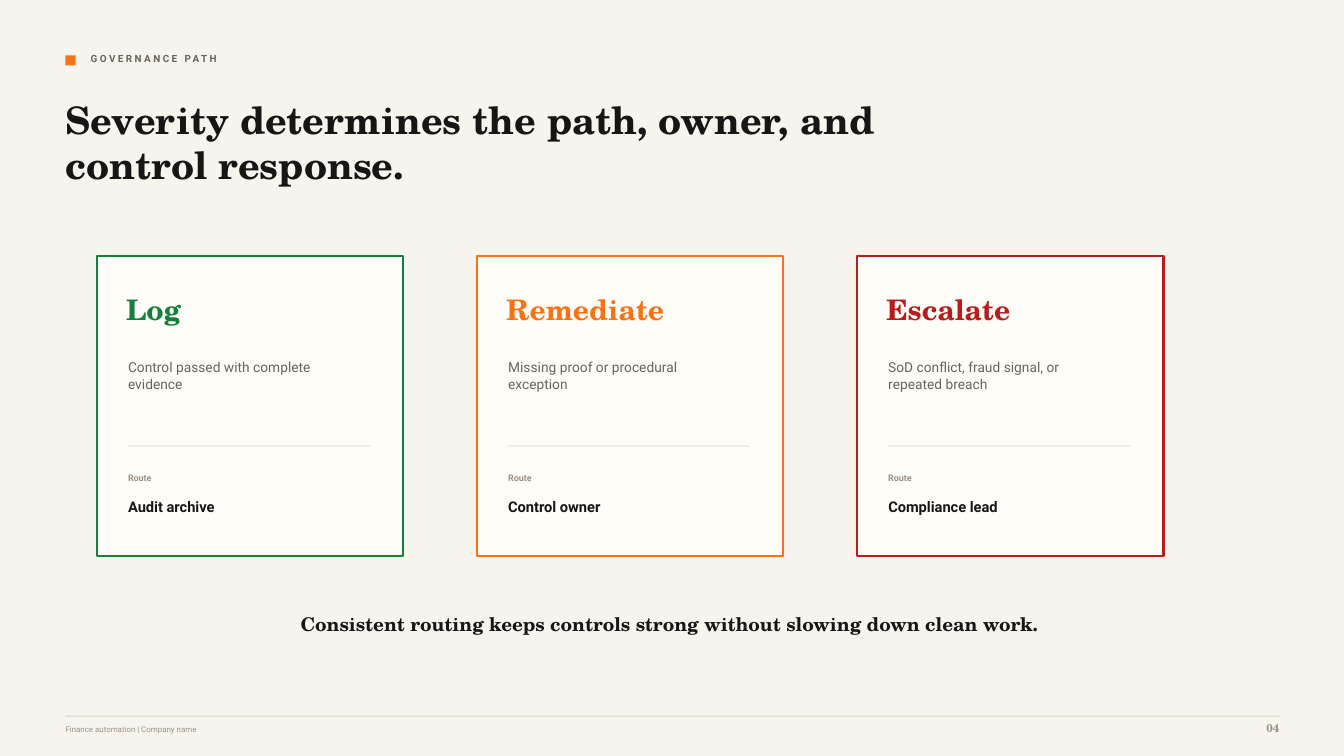
"""Build the governance path slide with its three severity cards."""
from pptx import Presentation
from pptx.dml.color import RGBColor
from pptx.enum.shapes import MSO_SHAPE as Shape
from pptx.enum.text import PP_ALIGN as Align
from pptx.util import Emu, Pt

EMU_PER_PX = 9144
SERIF, SANS = "TeX Gyre Schola", "Roboto"
COLORS = {
    "paper": "F7F4EE", "card": "FFFDF8", "rule": "D9D0C3",
    "ink": "171614", "body": "69635A", "muted": "9A9184",
    "green": "15803D", "orange": "F97316", "red": "B91C1C",
}
CARDS = [
    ("Log", "green", ["Control passed with complete", "evidence"], "Audit archive"),
    ("Remediate", "orange", ["Missing proof or procedural", "exception"], "Control owner"),
    ("Escalate", "red", ["SoD conflict, fraud signal, or", "repeated breach"], "Compliance lead"),
]
CARD_LEFT, CARD_TOP, CARD_PITCH = 96, 254, 377


def px(*lengths):
    """Turn whole pixels into EMU lengths."""
    return [Emu(length * EMU_PER_PX) for length in lengths]


def color(name):
    """Look up a named colour."""
    return RGBColor.from_string(COLORS[name])


class SlideBuilder:
    """Hold the current slide and draw its elements in one style."""

    def __init__(self, page):
        """Keep the page and give it the paper colour."""
        self.page = page
        page.background.fill.solid()
        page.background.fill.fore_color.rgb = color("paper")

    def rect(self, left, top, width, height, fill, line=None):
        """Draw a flat rectangle, outlined if a line colour is given."""
        shape = self.page.shapes.add_shape(Shape.RECTANGLE, *px(left, top, width, height))
        shape.shadow.inherit = False
        shape.fill.solid()
        shape.fill.fore_color.rgb = color(fill)
        if line:
            shape.line.color.rgb = color(line)
            shape.line.width = Pt(1.5)
        else:
            shape.line.fill.background()

    def text(self, left, top, width, height, lines, size, font, ink,
             bold=True, align=Align.LEFT, tracking=None):
        """Write one paragraph per line in a box without margins."""
        box = self.page.shapes.add_textbox(*px(left, top, width, height))
        frame = box.text_frame
        frame.word_wrap = True
        frame.margin_left = frame.margin_top = frame.margin_right = frame.margin_bottom = 0
        for index, line in enumerate(lines):
            para = frame.add_paragraph() if index else frame.paragraphs[0]
            para.alignment = align
            span = para.add_run()
            span.text = line
            span.font.name = font
            span.font.size = Pt(size)
            span.font.bold = bold
            span.font.color.rgb = color(ink)
            if tracking:
                span.font._element.set("spc", str(tracking))

    def card(self, left, top, title, accent, description, owner):
        """Draw a severity card with its description and route."""
        inner = left + 31
        self.rect(left, top, 304, 298, "card", accent)
        self.text(left + 29, top + 36, 229, 35, [title], 20.2, SERIF, accent)
        self.text(inner, top + 102, 233, 52, description, 9.8, SANS, "body", bold=False)
        self.rect(inner, top + 188, 240, 1, "rule")
        self.text(inner, top + 215, 167, 15, ["Route"], 6.4, SANS, "muted")
        self.text(inner, top + 240, 229, 23, [owner], 10.5, SANS, "ink")


def main():
    """Build and save the deck."""
    deck = Presentation()
    deck.slide_width, deck.slide_height = px(1333, 750)
    slide = SlideBuilder(deck.slides.add_slide(deck.slide_layouts[6]))

    slide.rect(65, 55, 10, 10, "orange")
    slide.text(90, 52, 583, 19, ["GOVERNANCE PATH"], 7.1, SANS, "body", tracking=177)
    slide.text(65, 96, 938, 102,
               ["Severity determines the path, owner, and control response."],
               27, SERIF, "ink")

    for index, content in enumerate(CARDS):
        slide.card(CARD_LEFT + index * CARD_PITCH, CARD_TOP, *content)

    slide.text(185, 608, 958, 29,
               ["Consistent routing keeps controls strong without slowing down clean work."],
               13.5, SERIF, "ink", align=Align.CENTER)
    slide.rect(65, 710, 1204, 1, "rule")
    slide.text(65, 719, 792, 15, ["Finance automation | Company name"],
               5.6, SANS, "muted", bold=False)
    slide.text(1219, 715, 50, 19, ["04"], 8.2, SERIF, "muted", align=Align.RIGHT)
    deck.save("out.pptx")


if __name__ == "__main__":
    main()
